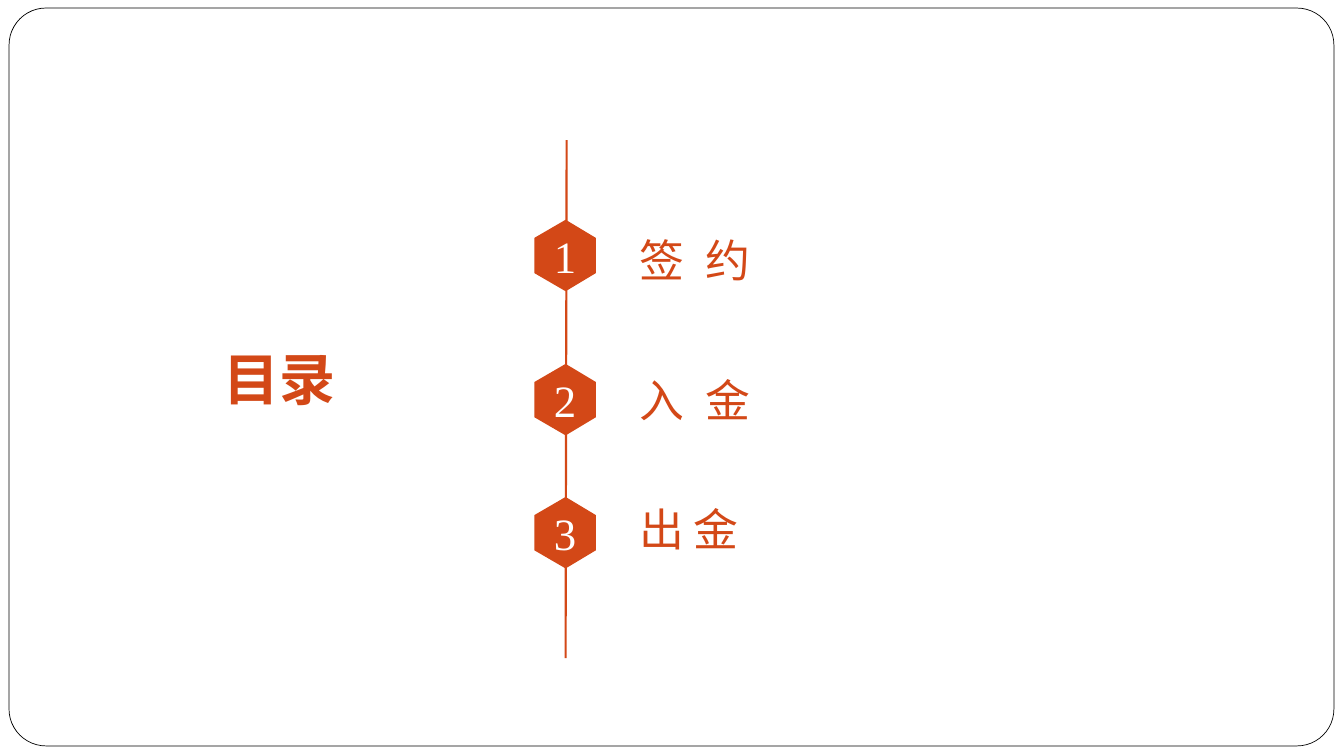
from dataclasses import dataclass

from lxml.etree import SubElement
from pptx import Presentation
from pptx.dml.color import RGBColor
from pptx.enum.shapes import MSO_CONNECTOR, MSO_SHAPE
from pptx.enum.text import MSO_ANCHOR, PP_ALIGN
from pptx.oxml.ns import qn
from pptx.util import Inches, Pt


@dataclass(frozen=True)
class Theme:
    """Colours, fonts and type sizes of the slide."""
    accent: RGBColor = RGBColor(0xD3, 0x48, 0x17)
    white: RGBColor = RGBColor(0xFF, 0xFF, 0xFF)
    black: RGBColor = RGBColor(0, 0, 0)
    head: str = "Roboto"
    body: str = "Times New Roman"
    big: Pt = Pt(40)
    mid: Pt = Pt(32)


THEME = Theme()
ITEMS = [
    ("签 约", 2.18, 2.32, 4),
    ("入 金", 3.61, 3.71, 4),
    ("出 金", 4.93, 4.99, 0),
]


def style(para, name, size, color, bold=False):
    """Set the font of a paragraph."""
    font = para.font
    font.name, font.size, font.bold = name, size, bold
    font.color.rgb = color


def place(shape, left, top, width, height):
    """Move and size a shape, in inches."""
    shape.left, shape.top = Inches(left), Inches(top)
    shape.width, shape.height = Inches(width), Inches(height)


def add_frame(slide):
    """Draw the rounded border behind all else."""
    frame = slide.shapes.add_shape(
        MSO_SHAPE.ROUNDED_RECTANGLE,
        Inches(0.09), Inches(0.08), Inches(13.14), Inches(7.32))
    frame.adjustments[0] = 0.05
    frame.shadow.inherit = False
    frame.fill.solid()
    frame.fill.fore_color.rgb = THEME.white
    frame.line.color.rgb = THEME.black
    frame.line.width = Pt(0.5)
    slide.shapes.element.insert(2, frame.element)


def set_title(slide, text):
    """Fill and format the title."""
    title = slide.shapes.title
    place(title, 1.62, 3.37, 2.63, 0.77)
    frame = title.text_frame
    frame.text = text
    frame.margin_left = Inches(0.6)
    frame.vertical_anchor = MSO_ANCHOR.TOP
    para = frame.paragraphs[0]
    para.alignment = PP_ALIGN.LEFT
    style(para, THEME.head, THEME.big, THEME.accent, True)


def add_spine(slide):
    """Draw the line that joins the markers."""
    spine = slide.shapes.add_connector(
        MSO_CONNECTOR.STRAIGHT,
        Inches(5.62), Inches(1.39), Inches(5.61), Inches(6.53))
    spine.line.color.rgb = THEME.accent
    spine.line.width = Pt(1.5)
    props = spine.element.find(qn("p:spPr"))
    SubElement(props, qn("a:effectLst"))


def add_marker(slide, number, top):
    """Draw a numbered hexagon."""
    left, mid, right = 5.3, 5.61, 5.91
    points = [(mid, top), (right, top + 0.18), (right, top + 0.53),
              (mid, top + 0.71), (left, top + 0.53), (left, top + 0.18)]
    first, *rest = [(Inches(x), Inches(y)) for x, y in points]
    builder = slide.shapes.build_freeform(*first)
    builder.add_line_segments(rest, close=True)
    marker = builder.convert_to_shape()
    marker.shadow.inherit = False
    marker.fill.solid()
    marker.fill.fore_color.rgb = THEME.accent
    marker.line.fill.background()
    frame = marker.text_frame
    frame.text = str(number)
    frame.vertical_anchor = MSO_ANCHOR.MIDDLE
    para = frame.paragraphs[0]
    para.alignment = PP_ALIGN.CENTER
    style(para, THEME.body, THEME.mid, THEME.white)


def add_label(slide, text, top, track):
    """Write an entry, its letters spaced by track points."""
    box = slide.shapes.add_textbox(
        Inches(6.24), Inches(top), Inches(4.81), Inches(0.44))
    frame = box.text_frame
    frame.word_wrap = True
    frame.text = text
    para = frame.paragraphs[0]
    para.line_spacing = 0.9
    style(para, THEME.body, THEME.mid, THEME.accent)
    if track:
        props = para.runs[0]._r.get_or_add_rPr()
        props.set("spc", str(track * 100))


def main():
    """Build and save the contents slide."""
    deck = Presentation()
    deck.slide_width, deck.slide_height = Inches(13.33), Inches(7.5)
    slide = deck.slides.add_slide(deck.slide_layouts.get_by_name("Title Only"))
    add_frame(slide)
    set_title(slide, "目录")
    add_spine(slide)
    for number, (text, top, base, track) in enumerate(ITEMS, 1):
        add_marker(slide, number, top)
        add_label(slide, text, base, track)
    deck.save("out.pptx")


if __name__ == "__main__":
    main()
